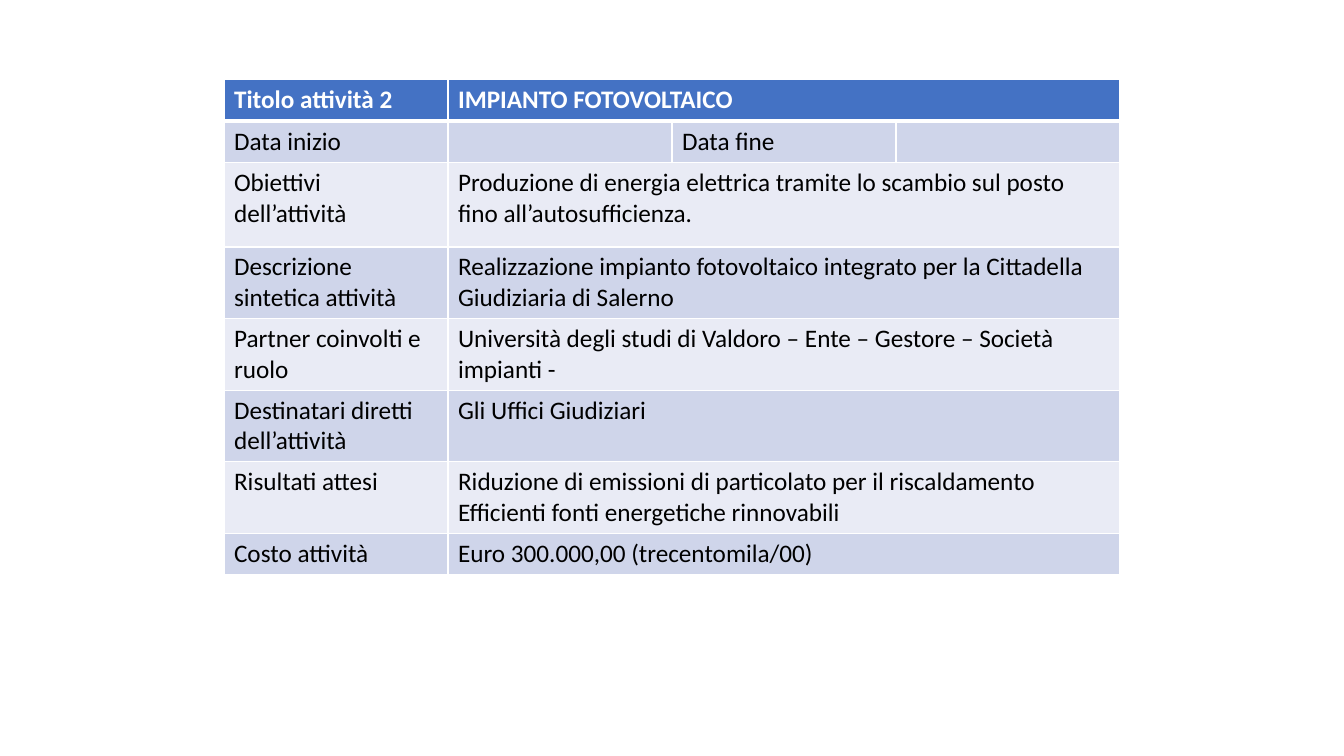
from lxml import etree
from pptx import Presentation
from pptx import util as u
from pptx.dml.color import RGBColor
from pptx.oxml import ns

WHITE = RGBColor(0xFF, 0xFF, 0xFF)
BLACK = RGBColor(0x00, 0x00, 0x00)
HEADER_BLUE = RGBColor(0x44, 0x72, 0xC4)
BANDS = [RGBColor(0xE9, 0xEB, 0xF5), RGBColor(0xCF, 0xD5, 0xEA)]

COLUMNS = 4
ONE_LINE, TWO_LINES, TALL = 0.41, 0.71, 0.84
# Row height and cell texts; a row of two cells has its second one span the rest.
ACTIVITY = [
    (ONE_LINE, ["Titolo attività 2", "IMPIANTO FOTOVOLTAICO"]),
    (ONE_LINE, ["Data inizio", "", "Data fine", ""]),
    (TALL, ["Obiettivi dell’attività",
            "Produzione di energia elettrica tramite lo scambio sul posto "
            "fino all’autosufficienza."]),
    (TWO_LINES, ["Descrizione sintetica attività",
                 "Realizzazione impianto fotovoltaico integrato per la "
                 "Cittadella Giudiziaria di Salerno"]),
    (TWO_LINES, ["Partner coinvolti e ruolo",
                 "Università degli studi di Valdoro – Ente – Gestore – Società impianti -"]),
    (TWO_LINES, ["Destinatari diretti dell’attività", "Gli Uffici Giudiziari"]),
    (TWO_LINES, ["Risultati attesi",
                 "Riduzione di emissioni di particolato per il riscaldamento\n"
                 "Efficienti fonti energetiche rinnovabili"]),
    (ONE_LINE, ["Costo attività", "Euro 300.000,00 (trecentomila/00)"]),
]


def set_borders(cell, top, bottom):
    """Draw white borders; they must precede the fill in the cell properties."""
    tc_pr = cell._tc.get_or_add_tcPr()
    widths = {"L": 1, "R": 1, "T": top, "B": bottom}
    for i, (side, width) in enumerate(widths.items()):
        ln = etree.Element(ns.qn(f"a:ln{side}"), w=str(u.Pt(width)))
        fill = etree.SubElement(ln, ns.qn("a:solidFill"))
        etree.SubElement(fill, ns.qn("a:srgbClr"), val=str(WHITE))
        tc_pr.insert(i, ln)


def write_cell(cell, value, color, bold):
    tf = cell.text_frame
    for i, line in enumerate(value.split("\n")):
        p = tf.add_paragraph() if i else tf.paragraphs[0]
        p.font.size = u.Pt(18)
        if line:
            r = p.add_run()
            r.text = line
            r.font.name = "Calibri"
            r.font.size = u.Pt(18)
            r.font.bold = bold
            r.font.color.rgb = color


def add_activity_table(s, left, top, width, rows):
    height = u.Inches(sum(h for h, _ in rows))
    table = s.shapes.add_table(len(rows), COLUMNS, left, top, width, height).table
    for column in table.columns:
        column.width = width // COLUMNS
    for i, (row_height, values) in enumerate(rows):
        header = i == 0
        table.rows[i].height = u.Inches(row_height)
        for j in range(COLUMNS):
            cell = table.cell(i, j)
            cell.fill.solid()
            cell.fill.fore_color.rgb = HEADER_BLUE if header else BANDS[i % 2]
            set_borders(cell, top=3 if i == 1 else 1, bottom=3 if header else 1)
        if len(values) < COLUMNS:
            table.cell(i, 1).merge(table.cell(i, COLUMNS - 1))
        for j, value in enumerate(values):
            write_cell(table.cell(i, j), value, WHITE if header else BLACK, header)


def main():
    prs = Presentation()
    prs.slide_width, prs.slide_height = u.Inches(13.33), u.Inches(7.5)
    s = prs.slides.add_slide(prs.slide_layouts[6])
    sixth = prs.slide_width // 6
    add_activity_table(s, sixth, u.Inches(0.79), 4 * sixth, ACTIVITY)
    prs.save("out.pptx")


if __name__ == "__main__":
    main()
